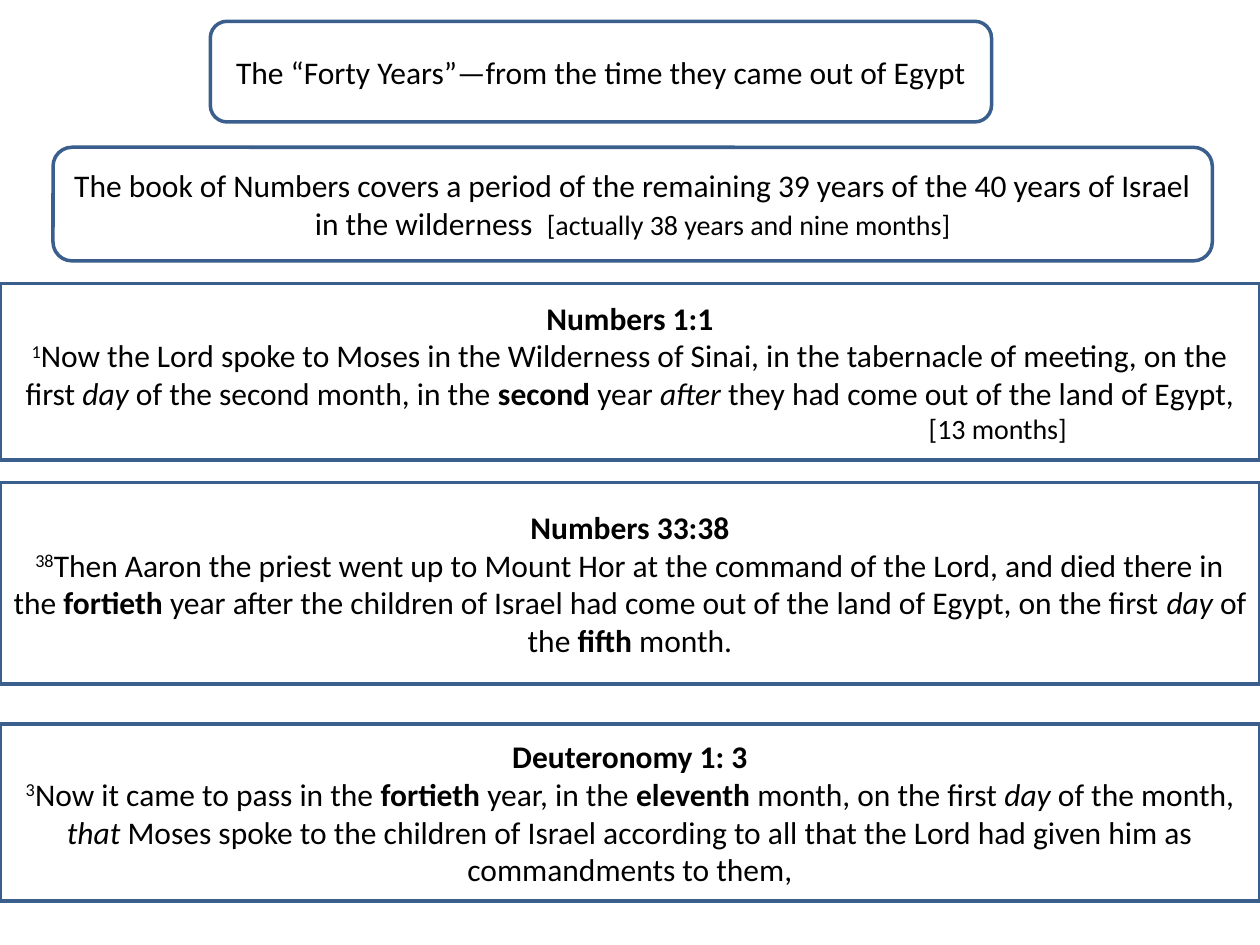
from dataclasses import dataclass

from pptx import Presentation
from pptx.dml.color import RGBColor
from pptx.enum.shapes import MSO_SHAPE as Preset
from pptx.enum.text import MSO_ANCHOR as Anchor, PP_ALIGN as Align
from pptx.slide import Slide
from pptx.util import Cm, Pt

INK, PAPER, BORDER = "000000", "FFFFFF", "3A5F8C"
PAGE_WIDTH, PAGE_HEIGHT = 25.4, 19.05


@dataclass(frozen=True)
class Span:
    text: str
    bold: bool = False
    italic: bool = False
    raised: bool = False
    size: int = 18


@dataclass(frozen=True)
class Statement:
    left: float
    top: float
    width: float
    height: float
    spans: tuple[Span, ...]


@dataclass(frozen=True)
class Verse:
    top: float
    height: float
    reference: str
    spans: tuple[Span, ...]
    remark: str = ""


def bold(text: str) -> Span:
    return Span(text, bold=True)


def italic(text: str) -> Span:
    return Span(text, italic=True)


def number(text: str) -> Span:
    return Span(text, raised=True)


STATEMENTS = (
    Statement(4.24, 0.43, 15.75, 2.03, (
        Span("The “Forty Years”—from the time they came out of Egypt"),
    )),
    Statement(1.07, 2.97, 23.37, 2.29, (
        Span("The book of Numbers covers a period of the remaining 39 years "
             "of the 40 years of Israel in the wilderness  "),
        Span("[actually 38 years and nine months]", size=16),
    )),
)

VERSES = (
    Verse(5.72, 3.56, "Numbers 1:1", (
        number("1"),
        Span("Now the Lord spoke to Moses in the Wilderness of Sinai, "
             "in the tabernacle of meeting, on the first "),
        italic("day"),
        Span(" of the second month, in the"),
        bold(" second "),
        Span("year"),
        italic(" after "),
        Span("they had come out of the land of Egypt,"),
    ), "[13 months]"),
    Verse(9.73, 4.06, "Numbers 33:38", (
        number("38"),
        Span("Then Aaron the priest went up to Mount Hor at the command "
             "of the Lord, and died there in the "),
        bold("fortieth "),
        Span("year after the children of Israel had come out of the land "
             "of Egypt, on the first "),
        italic("day"),
        Span(" of the "),
        bold("fifth "),
        Span("month."),
    )),
    Verse(14.6, 3.56, "Deuteronomy 1: 3", (
        number("3"),
        Span("Now it came to pass in the "),
        bold("fortieth "),
        Span("year, in the "),
        bold("eleventh "),
        Span("month, on the first "),
        italic("day"),
        Span(" of the month, "),
        italic("that"),
        Span(" Moses spoke to the children of Israel according to all that "
             "the Lord had given him as commandments to them,"),
    )),
)


def rgb(value: str) -> RGBColor:
    return RGBColor.from_string(value)


def add_panel(slide: Slide, preset: Preset, left: float, top: float,
              width: float, height: float):
    panel = slide.shapes.add_shape(preset, Cm(left), Cm(top), Cm(width), Cm(height))
    panel.shadow.inherit = False
    panel.fill.solid()
    panel.fill.fore_color.rgb = rgb(PAPER)
    panel.line.color.rgb = rgb(BORDER)
    panel.line.width = Pt(2)
    panel.text_frame.word_wrap = True
    panel.text_frame.vertical_anchor = Anchor.MIDDLE
    return panel.text_frame


def write(paragraph, spans: tuple[Span, ...]) -> None:
    paragraph.alignment = Align.CENTER
    paragraph.font.name = "Calibri"
    for span in spans:
        run = paragraph.add_run()
        run.text = span.text
        run.font.size = Pt(span.size)
        run.font.bold = span.bold
        run.font.italic = span.italic
        run.font.color.rgb = rgb(INK)
        if span.raised:
            run._r.get_or_add_rPr().set("baseline", "30000")


def draw_statement(slide: Slide, statement: Statement) -> None:
    frame = add_panel(slide, Preset.ROUNDED_RECTANGLE, statement.left,
                      statement.top, statement.width, statement.height)
    write(frame.paragraphs[0], statement.spans)


def draw_verse(slide: Slide, verse: Verse) -> None:
    frame = add_panel(slide, Preset.RECTANGLE, 0, verse.top, PAGE_WIDTH, verse.height)
    passage = frame.paragraphs[0]
    write(passage, (bold(verse.reference),))
    passage.add_line_break()
    write(passage, verse.spans)
    if verse.remark:
        remark = frame.add_paragraph()
        write(remark, (Span(verse.remark, size=16),))
        remark._p.get_or_add_pPr().set("marL", str(Cm(14.83)))


def main() -> None:
    deck = Presentation()
    deck.slide_width, deck.slide_height = Cm(PAGE_WIDTH), Cm(PAGE_HEIGHT)
    slide = deck.slides.add_slide(deck.slide_layouts[6])
    for statement in STATEMENTS:
        draw_statement(slide, statement)
    for verse in VERSES:
        draw_verse(slide, verse)
    deck.save("out.pptx")


if __name__ == "__main__":
    main()
